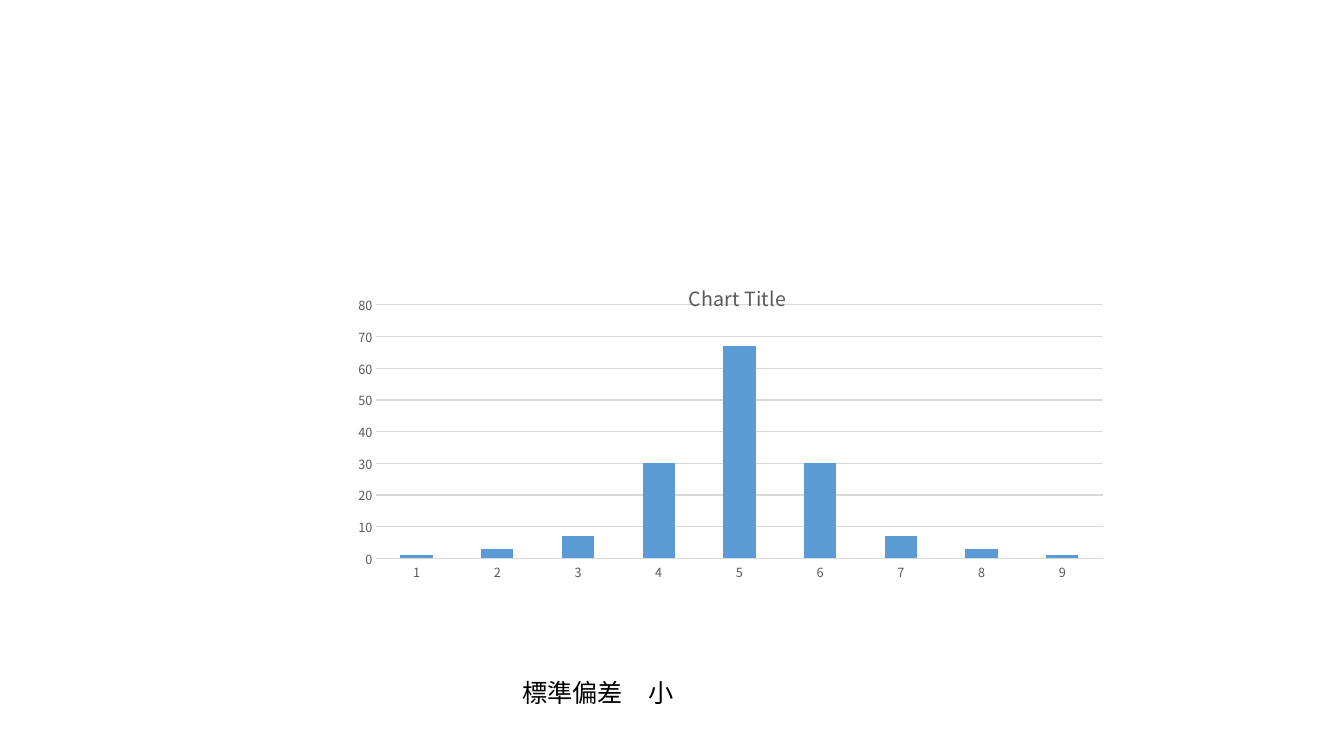
from lxml.etree import SubElement
from pptx import Presentation
from pptx.chart.data import CategoryChartData
from pptx.dml.color import RGBColor
from pptx.enum.chart import XL_CHART_TYPE, XL_TICK_MARK
from pptx.enum.text import MSO_AUTO_SIZE
from pptx.oxml.ns import qn
from pptx.util import Inches, Pt

FONT = "Noto Sans CJK JP"
COLORS = {"text": "000000", "label": "595959", "grid": "D9D9D9", "bar": "5B9BD5"}
FREQUENCIES = (1, 3, 7, 30, 67, 30, 7, 3, 1)
PLOT_LAYOUT = {"x": 0.034, "y": 0.115, "w": 0.937, "h": 0.731}


def style_font(font, size, color):
    """Set typeface, size and colour of a font."""
    font.name = FONT
    font.size = Pt(size)
    font.bold = False
    font.color.rgb = RGBColor.from_string(COLORS[color])


def style_line(line):
    """Give a line the thin grey look of the grid."""
    line.color.rgb = RGBColor.from_string(COLORS["grid"])
    line.width = Pt(0.75)


def style_axis(axis):
    """Remove tick marks and style the labels of an axis."""
    axis.major_tick_mark = axis.minor_tick_mark = XL_TICK_MARK.NONE
    style_font(axis.tick_labels.font, 9, "label")


def place_plot(chart):
    """Fix the inner plot area as fractions of the chart."""
    plot_area = chart.plots[0]._element.getparent()
    layout = plot_area.find(qn("c:layout"))
    if layout is None:
        layout = SubElement(plot_area, qn("c:layout"))
        plot_area.insert(0, layout)
    manual = SubElement(layout, qn("c:manualLayout"))
    SubElement(manual, qn("c:layoutTarget"), val="inner")
    for side in ("x", "y"):
        SubElement(manual, qn(f"c:{side}Mode"), val="edge")
    for side, fraction in PLOT_LAYOUT.items():
        SubElement(manual, qn(f"c:{side}"), val=str(fraction))


def add_distribution(slide):
    """Add the column chart of the narrow distribution."""
    distribution = CategoryChartData()
    distribution.categories = [str(n) for n in range(1, len(FREQUENCIES) + 1)]
    distribution.add_series("Series 1", FREQUENCIES)
    chart = slide.shapes.add_chart(
        XL_CHART_TYPE.COLUMN_STACKED,
        Inches(3.47), Inches(2.63), Inches(7.69), Inches(3.44), distribution,
    ).chart
    style_font(chart.font, 10, "text")
    chart.has_legend = False
    chart.has_title = True
    heading = chart.chart_title.text_frame
    heading.text = "Chart Title"
    style_font(heading.paragraphs[0].runs[0].font, 14, "label")

    bars = chart.plots[0]
    bars.gap_width = 150
    bars.overlap = 100
    bars.vary_by_categories = False
    bar_fill = bars.series[0].format.fill
    bar_fill.solid()
    bar_fill.fore_color.rgb = RGBColor.from_string(COLORS["bar"])

    style_axis(chart.category_axis)
    style_line(chart.category_axis.format.line)
    style_axis(chart.value_axis)
    chart.value_axis.format.line.fill.background()
    chart.value_axis.minimum_scale = 0
    chart.value_axis.maximum_scale = 80
    chart.value_axis.major_unit = 10
    style_line(chart.value_axis.major_gridlines.format.line)
    place_plot(chart)


def add_caption(slide, caption):
    """Add the caption under the chart."""
    frame = slide.shapes.add_textbox(
        Inches(5.08), Inches(6.67), Inches(1.72), Inches(0.4)
    ).text_frame
    frame.word_wrap = False
    frame.auto_size = MSO_AUTO_SIZE.SHAPE_TO_FIT_TEXT
    frame.text = caption
    font = frame.paragraphs[0].runs[0].font
    style_font(font, 18, "text")
    SubElement(font._element, qn("a:ea"), typeface=FONT)


def main():
    """Build and save the slide."""
    presentation = Presentation()
    presentation.slide_width = Inches(13.33)
    presentation.slide_height = Inches(7.5)
    slide = presentation.slides.add_slide(presentation.slide_layouts[6])
    add_distribution(slide)
    add_caption(slide, "標準偏差　小")
    presentation.save("out.pptx")


if __name__ == "__main__":
    main()
